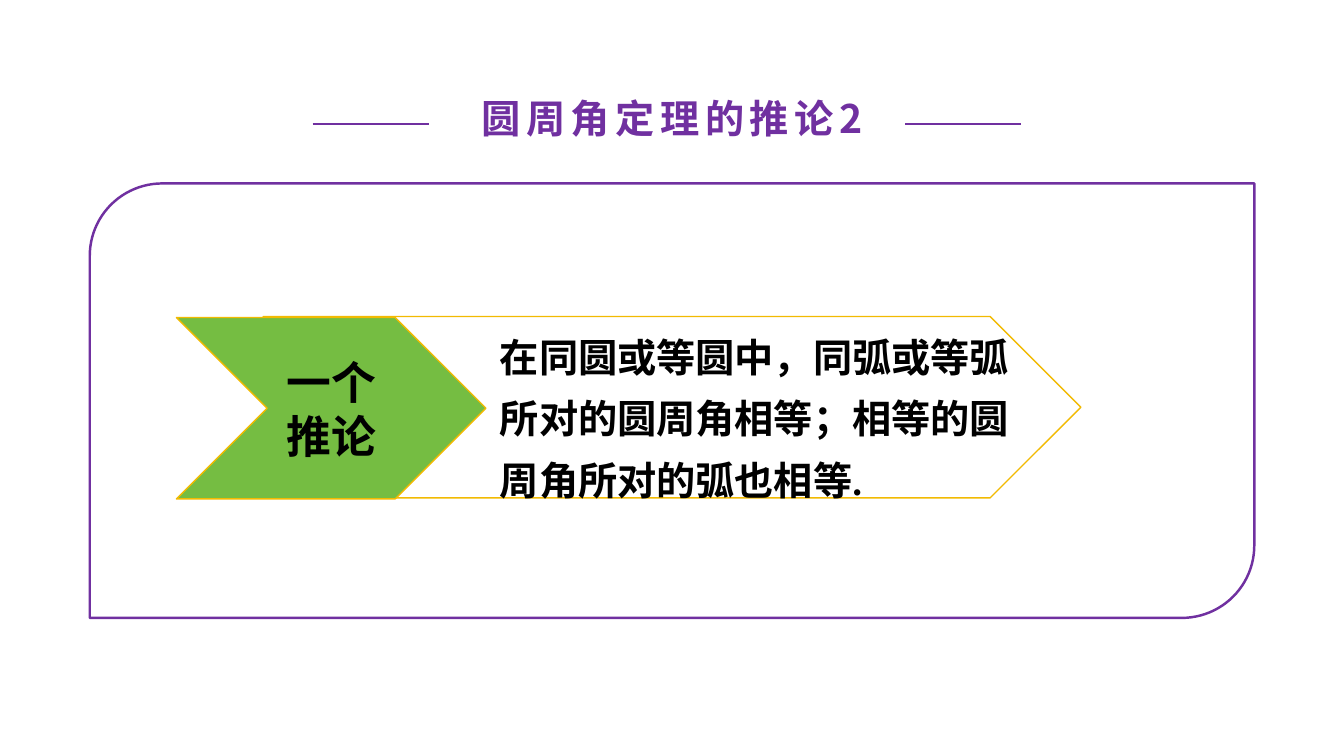
from dataclasses import dataclass

from pptx import Presentation
from pptx.dml.color import RGBColor
from pptx.enum.shapes import MSO_CONNECTOR as Wire, MSO_SHAPE as Form
from pptx.enum.text import MSO_ANCHOR as Anchor, MSO_AUTO_SIZE as Fit, PP_ALIGN as Align
from pptx.oxml.ns import qn
from pptx.util import Inches, Pt


@dataclass(frozen=True)
class Theme:
    purple: str = "7030A0"
    gold: str = "F2BA02"
    green: str = "75BD42"
    white: str = "FFFFFF"
    black: str = "000000"
    cjk: str = "Noto Sans CJK SC"
    sans: str = "Arial"
    serif: str = "Times New Roman"
    large: int = 32
    normal: int = 28
    thick: float = 1.75
    thin: float = 1


def write(frame, text, *, font, size, color, east, align=Align.LEFT,
          anchor=Anchor.TOP, pad=(0.1, 0.05), space=None, track=None):
    """Fill a text frame with one bold paragraph; track is letter spacing in points."""
    frame.word_wrap = True
    frame.auto_size = Fit.NONE
    frame.vertical_anchor = anchor
    frame.margin_left = frame.margin_right = Inches(pad[0])
    frame.margin_top = frame.margin_bottom = Inches(pad[1])
    par = frame.paragraphs[0]
    par.alignment = align
    par.line_spacing = space
    run = par.add_run()
    run.text = text
    run.font.name = font
    run.font.size = Pt(size)
    run.font.bold = True
    run.font.color.rgb = RGBColor.from_string(color)
    props = run.font._element
    props.get_or_add_latin().addnext(props.makeelement(qn("a:ea"), {"typeface": east}))
    if track:
        props.set("spc", str(track * 100))


class Page:
    def __init__(self, slide, theme):
        self.slide = slide
        self.theme = theme

    def title(self, text, box):
        head = self.slide.shapes.title
        head.left, head.top, head.width, head.height = map(Inches, box)
        write(head.text_frame, text, font=self.theme.cjk, east=self.theme.cjk,
              size=self.theme.normal, color=self.theme.purple, align=Align.CENTER,
              anchor=Anchor.MIDDLE, pad=(0.13, 0.07), track=4)

    def shape(self, form, box, line, width, fill=None):
        item = self.slide.shapes.add_shape(form, *map(Inches, box))
        item.shadow.inherit = False
        if fill:
            item.fill.solid()
            item.fill.fore_color.rgb = RGBColor.from_string(fill)
        else:
            item.fill.background()
        item.line.color.rgb = RGBColor.from_string(line)
        item.line.width = Pt(width)
        return item

    def rule(self, left, top, length):
        wire = self.slide.shapes.add_connector(
            Wire.STRAIGHT, *map(Inches, (left, top, left + length, top)))
        wire.line.color.rgb = RGBColor.from_string(self.theme.purple)
        wire.line.width = Pt(self.theme.thin)
        props = wire._element.spPr
        props.append(props.makeelement(qn("a:effectLst"), {}))

    def text(self, text, box, **style):
        area = self.slide.shapes.add_textbox(*map(Inches, box))
        write(area.text_frame, text, **style)


def main():
    deck = Presentation()
    deck.slide_width, deck.slide_height = Inches(13.33), Inches(7.5)
    theme = Theme()
    page = Page(deck.slides.add_slide(deck.slide_layouts[5]), theme)

    page.shape(Form.ROUND_2_DIAG_RECTANGLE, (0.89, 1.82, 11.55, 4.31),
               theme.purple, theme.thick)
    page.title("圆周角定理的推论2", (4.04, 0.85, 5.25, 0.63))
    for left in (3.1, 8.98):
        page.rule(left, 1.23, 1.15)

    page.shape(Form.CHEVRON, (2.61, 3.14, 8.11, 1.8),
               theme.gold, theme.thin, theme.white)
    label = page.shape(Form.CHEVRON, (1.75, 3.15, 3.07, 1.8),
                       theme.gold, theme.thin, theme.green)
    write(label.text_frame, "一个推论", font=theme.sans, east=theme.cjk,
          size=theme.large, color=theme.black, align=Align.CENTER, anchor=Anchor.MIDDLE)
    page.text("在同圆或等圆中，同弧或等弧所对的圆周角相等；相等的圆周角所对的弧也相等.",
              (4.86, 3.12, 5.35, 1.87), font=theme.serif, east=theme.cjk,
              size=theme.normal, color=theme.black, space=1.3)

    deck.save("out.pptx")


if __name__ == "__main__":
    main()
